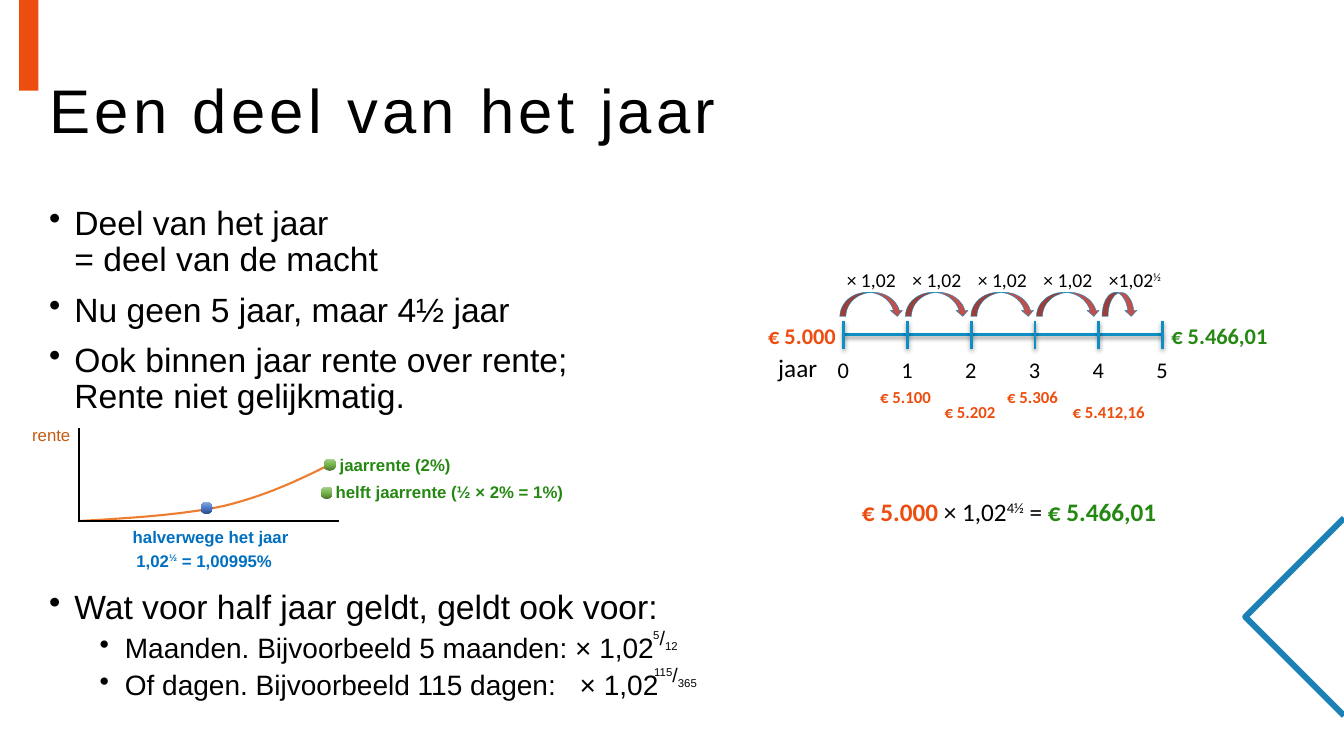
from dataclasses import dataclass

from lxml.etree import SubElement
from pptx import Presentation
from pptx.dml.color import RGBColor as RGB
from pptx.enum.shapes import MSO_CONNECTOR as Connector, MSO_SHAPE as Shape
from pptx.enum.text import MSO_ANCHOR as Anchor, MSO_AUTO_SIZE as AutoSize, PP_ALIGN as Align
from pptx.oxml.ns import qn
from pptx.util import Emu, Inches, Pt


@dataclass(frozen=True)
class Theme:
    text_font: str = "Arial"
    figure_font: str = "Calibri"
    black: str = "000000"
    orange: str = "ED4D0F"
    green: str = "258812"
    blue: str = "0070C0"
    rust: str = "C55A11"
    curve: str = "ED7D31"
    timeline: str = "0C8FC4"
    arrow: str = "C0504D"
    chevron: str = "1A80B6"
    blue_dot: tuple = ("2A4B86", "4A76C6", "8FAADC")
    green_dot: tuple = ("4B7430", "74B349", "A9D18E")
    title: int = 44
    body: int = 24
    sub_body: int = 20
    large: int = 18
    medium: int = 16
    note: int = 14
    small: int = 12


theme = Theme()
presentation = Presentation()
presentation.slide_width, presentation.slide_height = Inches(13.33), Inches(7.5)
slide = presentation.slides.add_slide(presentation.slide_layouts[5])
shapes = slide.shapes

# Grid of 13.33 columns by 7.5 rows
COLUMN = presentation.slide_width / 13.33
ROW = presentation.slide_height / 7.5


def place(*lengths):
    """Turn alternating columns and rows into slide lengths."""
    return [Emu(round(length * (ROW if index % 2 else COLUMN)))
            for index, length in enumerate(lengths)]


def add_label(box, runs, size, color=theme.black, font=theme.figure_font,
              bold=False, align=Align.LEFT, wrap=False):
    """Add one line of text; runs are (text, baseline percent, accent colour)."""
    frame = shapes.add_textbox(*place(*box)).text_frame
    frame.word_wrap = wrap
    frame.auto_size = AutoSize.SHAPE_TO_FIT_TEXT
    paragraph = frame.paragraphs[0]
    paragraph.alignment = align
    paragraph.font.name, paragraph.font.size = font, Pt(size)
    paragraph.font.bold = bold
    paragraph.font.color.rgb = RGB.from_string(color)
    for text, baseline, accent in [(runs, 0, None)] if isinstance(runs, str) else runs:
        run = paragraph.add_run()
        run.text = text
        if baseline:
            run._r.get_or_add_rPr().set("baseline", str(baseline * 1000))
        if accent:
            run.font.bold = True
            run.font.color.rgb = RGB.from_string(accent)


# Corner bar and chevron
bar = shapes.add_shape(Shape.RECTANGLE, *place(0.19, 0, 0.19, 0.9))
bar.shadow.inherit = False
bar.fill.solid()
bar.fill.fore_color.rgb = RGB.from_string(theme.orange)
bar.line.fill.background()

# Growth curve, as points on two Bézier segments
curve_segments = [((0.78, 5.17), (1.29, 5.14), (1.8, 5.11), (2.22, 5.02)),
                  ((2.22, 5.02), (2.63, 4.92), (2.95, 4.77), (3.27, 4.61))]
STEPS = 16
curve_points = [curve_segments[0][0]]
for start, control_1, control_2, end in curve_segments:
    for step in range(1, STEPS + 1):
        t = step / STEPS
        curve_points.append([
            (1 - t) ** 3 * a + 3 * (1 - t) ** 2 * t * b + 3 * (1 - t) * t ** 2 * c + t ** 3 * d
            for a, b, c, d in zip(start, control_1, control_2, end)])

chevron_points = [(13.33, 5.14), (12.35, 6.12), (13.33, 7.1)]
for points, color, width in [(chevron_points, theme.chevron, 4.25),
                             (curve_points, theme.curve, 1.5)]:
    corners = [place(*point) for point in points]
    builder = shapes.build_freeform(*corners[0])
    builder.add_line_segments(corners[1:], close=False)
    outline = builder.convert_to_shape()
    outline.shadow.inherit = False
    outline.fill.background()
    outline.line.color.rgb = RGB.from_string(color)
    outline.line.width = Pt(width)

# Title
title = shapes.title
title.left, title.top, title.width, title.height = place(0.39, 0.4, 12.58, 1.45)
title.text_frame.text = "Een deel van het jaar"
title.text_frame.vertical_anchor = Anchor.MIDDLE
title.text_frame.auto_size = AutoSize.NONE
paragraph = title.text_frame.paragraphs[0]
paragraph.alignment, paragraph.line_spacing = Align.LEFT, 0.9
paragraph.font.name, paragraph.font.size = theme.text_font, Pt(theme.title)
paragraph.font.color.rgb = RGB.from_string(theme.black)
paragraph.runs[0]._r.get_or_add_rPr().set("spc", "300")

# Bullets: text pieces, level, space before (the large one leaves room for the graph)
bullets = [
    (["Deel van het jaar \v= deel van de macht"], 0, 10),
    (["Nu geen 5 jaar, maar 4½ jaar"], 0, 10),
    (["Ook binnen jaar rente over rente;\vRente niet gelijkmatig."], 0, 10),
    (["Wat voor half jaar geldt, geldt ook voor:"], 0, 125),
    (["Maanden. Bijvoorbeeld 5 maanden: × 1,02"], 1, 5),
    (["Of dagen. Bijvoorbeeld 115 dagen:", " ", "× 1,02"], 1, 5),
]
frame = shapes.add_textbox(*place(0.39, 2, 6.87, 5.1)).text_frame
frame.word_wrap = True
for index, (pieces, level, space) in enumerate(bullets):
    paragraph = frame.add_paragraph() if index else frame.paragraphs[0]
    paragraph.text = pieces[0]
    for piece in pieces[1:]:
        run = paragraph.add_run()
        run.text = piece
        if piece == " ":  # widened gap before the factor
            run._r.get_or_add_rPr().set("spc", "1100")
    paragraph.level, paragraph.line_spacing, paragraph.space_before = level, 0.9, Pt(space)
    paragraph.font.name = theme.text_font
    paragraph.font.size = Pt(theme.sub_body if level else theme.body)
    paragraph.font.color.rgb = RGB.from_string(theme.black)
    properties = paragraph._p.get_or_add_pPr()
    properties.set("marL", str(Inches(0.25 + 0.5 * level)))
    properties.set("indent", str(Inches(-0.25)))
    bullet = SubElement(properties, qn("a:buChar"), char="•")
    properties.find(qn("a:defRPr")).addprevious(bullet)

# Timeline with ticks, and the axes of the graph
YEAR_0, YEAR_STEP = 8.37, 0.632
ticks = [YEAR_0 + YEAR_STEP * year for year in range(6)]
lines = [(8.36, 3.32, 11.53, 3.32, theme.timeline, 2)]
lines += [(x, 3.18, x, 3.46, theme.timeline, 2) for x in ticks]
lines += [(0.78, 4.25, 0.78, 5.18, theme.black, 1.5),
          (0.77, 5.17, 3.36, 5.17, theme.black, 1.5)]
for *ends, color, width in lines:
    line = shapes.add_connector(Connector.STRAIGHT, *place(*ends))
    line.line.color.rgb = RGB.from_string(color)
    line.line.width = Pt(width)
    effects = SubElement(line._element.spPr, qn("a:effectLst"))
    if color == theme.timeline:
        shadow = SubElement(effects, qn("a:outerShdw"), blurRad=str(Pt(3.1)),
                            dist=str(Pt(1.6)), dir="5400000", rotWithShape="0")
        shade = SubElement(shadow, qn("a:srgbClr"), val=theme.black)
        SubElement(shade, qn("a:alpha"), val="38000")

# Year numbers and amounts
add_label((7.62, 3.45, 0.59, 0.4), "jaar", theme.large)
for year, x in enumerate(ticks):
    add_label((x - 0.16, 3.48, 0.32, 0.37), str(year), theme.medium)
add_label((7.52, 3.15, 0.88, 0.37), "€ 5.000", theme.medium, theme.orange, bold=True)
add_label((11.52, 3.15, 1.17, 0.37), "€ 5.466,01", theme.medium, theme.green, bold=True)
for left, top, width, amount in [(8.63, 3.79, 0.71, "€ 5.100"), (9.27, 3.94, 0.72, "€ 5.202"),
                                 (9.89, 3.79, 0.72, "€ 5.306"), (10.54, 3.94, 0.93, "€ 5.412,16")]:
    add_label((left, top, width, 0.3), amount, theme.small, theme.orange, bold=True)

# Growth arrows: four whole years and one half
for year in range(5):
    half = year == 4
    left = 8.33 + 0.65 * year
    arrow = shapes.add_shape(Shape.CURVED_DOWN_ARROW,
                             *place(left, 2.9, 0.35 if half else 0.63, 0.24))
    arrow.shadow.inherit = False
    arrow.fill.solid()
    arrow.fill.fore_color.rgb = RGB.from_string(theme.arrow)
    arrow.line.color.rgb = RGB.from_string(theme.timeline)
    arrow.line.width = Pt(0.25)
    factor = [("×1,02", 0, None), ("½", 30, None)] if half else "× 1,02"
    add_label((left - 0.03, 2.61, 0.74 if half else 0.69, 0.34), factor, theme.note)

# Formula
add_label((8.45, 4.87, 3.15, 0.4),
          [("€ 5.000 ", 0, theme.orange), ("× 1,02", 0, None), ("4½", 30, None),
           (" = ", 0, None), ("€ 5.466,01", 0, theme.green)], theme.large, wrap=True)

# Graph points
for left, top, stops in [(1.99, 4.98, theme.blue_dot), (3.18, 4.83, theme.green_dot),
                         (3.21, 4.55, theme.green_dot)]:
    dot = shapes.add_shape(Shape.OVAL, *place(left, top, 0.12, 0.12))
    gradient = SubElement(dot._element.spPr, qn("a:gradFill"), rotWithShape="1")
    stop_list = SubElement(gradient, qn("a:gsLst"))
    for position, color in zip((0, 48, 100), stops):
        stop = SubElement(stop_list, qn("a:gs"), pos=str(position * 1000))
        SubElement(stop, qn("a:srgbClr"), val=color)
    SubElement(gradient, qn("a:lin"), ang="16200000", scaled="1")
    dot.line.fill.background()
    dot.shadow.inherit = False

# Graph labels
half_year = [("1,02", 0, None), ("½", 30, None), (" = 1,00995%", 0, None)]
for box, text, color, bold, align in [
        ((0.22, 4.16, 0.58, 0.3), "rente", theme.rust, False, Align.LEFT),
        ((1.21, 5.18, 1.76, 0.3), "halverwege het jaar", theme.blue, True, Align.CENTER),
        ((1.22, 5.41, 1.61, 0.3), half_year, theme.blue, True, Align.CENTER),
        ((3.23, 4.73, 2.48, 0.3), "helft jaarrente (½ × 2% = 1%)", theme.green, True, Align.LEFT),
        ((3.27, 4.46, 1.31, 0.3), "jaarrente (2%)", theme.green, True, Align.LEFT)]:
    add_label(box, text, theme.small, color, theme.text_font, bold, align)

# Fractional exponents
for left, top, width, above, below in [(6.38, 6.16, 0.51, "5", "12"),
                                       (6.39, 6.53, 0.73, "115", "365")]:
    add_label((left, top, width, 0.34), [(above, 30, None), ("/", 0, None), (below, -25, None)],
              theme.note, font=theme.text_font, wrap=True)

presentation.save("out.pptx")
